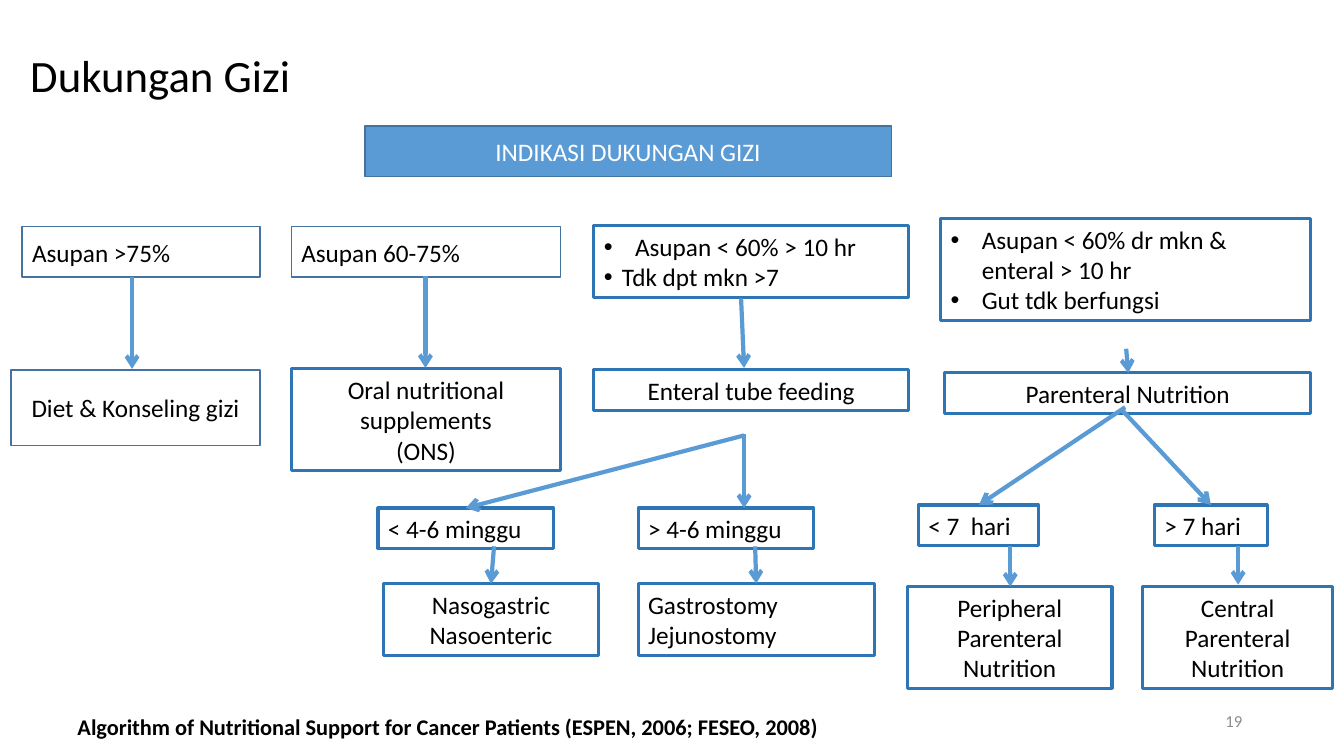
"""Build the nutritional support algorithm slide."""
from lxml.etree import SubElement
from pptx import Presentation
from pptx.dml.color import RGBColor
from pptx.enum.shapes import MSO_CONNECTOR as CONN, MSO_SHAPE as SHAPE
from pptx.enum.text import MSO_ANCHOR as ANCHOR, MSO_AUTO_SIZE as FIT, PP_ALIGN as ALIGN
from pptx.oxml.ns import qn
from pptx.util import Pt

PX = 9144
LEFT, CENTER, RIGHT = ALIGN.LEFT, ALIGN.CENTER, ALIGN.RIGHT
BLACK, WHITE, GRAY = "000000", "FFFFFF", "8C8C8C"
BLUE, DARK, EDGE = "5B9BD5", "2E75B6", "43739E"
THIN, THICK = (EDGE, 1), (DARK, 2.25)

INTAKE_BOXES = [
    (22, 225, 236, 50, ["Asupan >75%"], LEFT, THIN),
    (289, 225, 267, 50, ["Asupan 60-75%"], LEFT, THIN),
    (589, 224, 312, 71, ["Asupan < 60% > 10 hr", "Tdk dpt mkn >7"], LEFT, THICK, (31, 18)),
    (933, 217, 367, 101, ["Asupan < 60% dr mkn & enteral > 10 hr", "Gut tdk berfungsi"],
     LEFT, THICK, (31, 31)),
]
SUPPORT_BOXES = [
    (11, 367, 247, 75, ["Diet & Konseling gizi"], CENTER, THIN),
    (289, 366, 267, 101, ["Oral nutritional", "supplements", "(ONS)"], CENTER, THICK),
    (589, 367, 312, 40, ["Enteral tube feeding"], CENTER, THICK),
    (937, 370, 363, 40, ["Parenteral Nutrition"], CENTER, THICK),
]
DURATION_BOXES = [
    (375, 504, 174, 40, ["< 4-6 minggu"], LEFT, THICK),
    (633, 504, 174, 40, ["> 4-6 minggu"], LEFT, THICK),
    (911, 501, 119, 40, ["< 7  hari"], LEFT, THICK),
    (1145, 501, 112, 40, ["> 7 hari"], LEFT, THICK),
]
ROUTE_BOXES = [
    (380, 579, 214, 71, ["Nasogastric", "Nasoenteric"], CENTER, THICK),
    (633, 579, 234, 71, ["Gastrostomy", "Jejunostomy"], LEFT, THICK),
    (900, 582, 203, 101, ["Peripheral Parenteral", "Nutrition"], CENTER, THICK),
    (1133, 582, 189, 101, ["Central Parenteral Nutrition"], CENTER, THICK),
]
ARROWS = [
    (131, 275, 131, 366), (422, 274, 422, 365), (735, 296, 738, 365), (1117, 346, 1119, 370),
    (738, 432, 462, 504), (738, 431, 738, 504), (1116, 404, 971, 501), (1113, 407, 1201, 501),
    (490, 542, 487, 579), (749, 542, 750, 579), (1002, 542, 1002, 582), (1228, 542, 1228, 580),
]


def rgb(value):
    """Return a colour from a hex string."""
    return RGBColor.from_string(value)


def apply(target, values):
    """Set attributes of an object from a dict."""
    for name, value in values.items():
        setattr(target, name, value)


def place(sp, left, top, width, height):
    """Move and size a shape in px."""
    apply(sp, {"left": left * PX, "top": top * PX, "width": width * PX, "height": height * PX})


def add_bullet(p, indent):
    """Give a paragraph a round bullet with a hanging indent in px."""
    pPr = p._p.get_or_add_pPr()
    pPr.set("marL", str(indent * PX))
    pPr.set("indent", str(-indent * PX))
    SubElement(pPr, qn("a:buFont"), typeface="Arial")
    SubElement(pPr, qn("a:buChar"), char="•")


def write(sp, lines, align=LEFT, size=18, color=BLACK, bold=False, indents=()):
    """Fill a shape with one formatted paragraph per line."""
    tf = sp.text_frame
    apply(tf, {"word_wrap": True, "auto_size": FIT.NONE, "vertical_anchor": ANCHOR.MIDDLE})
    for i, line in enumerate(lines):
        p = tf.add_paragraph() if i else tf.paragraphs[0]
        p.alignment = align
        r = p.add_run()
        r.text = line
        apply(r.font, {"name": "Calibri", "size": Pt(size), "bold": bold})
        r.font.color.rgb = rgb(color)
        if indents:
            add_bullet(p, indents[i])


def add_box(s, left, top, width, height, lines, align, outline, indents=(),
            fill=None, color=BLACK):
    """Add an outlined flowchart box."""
    sp = s.shapes.add_shape(SHAPE.RECTANGLE, 0, 0, 0, 0)
    place(sp, left, top, width, height)
    sp.shadow.inherit = False
    if fill:
        sp.fill.solid()
        sp.fill.fore_color.rgb = rgb(fill)
    else:
        sp.fill.background()
    edge, weight = outline
    sp.line.color.rgb = rgb(edge)
    sp.line.width = Pt(weight)
    write(sp, lines, align, color=color, indents=indents)


def add_arrow(s, *ends):
    """Add an arrow between two points in px."""
    cn = s.shapes.add_connector(CONN.STRAIGHT, *(v * PX for v in ends))
    cn.line.color.rgb = rgb(BLUE)
    cn.line.width = Pt(3)
    SubElement(cn.line._get_or_add_ln(), qn("a:tailEnd"), type="arrow")
    SubElement(cn._element.spPr, qn("a:effectLst"))


def add_label(s, left, top, width, height, text, **style):
    """Add a one-line text box."""
    sp = s.shapes.add_textbox(0, 0, 0, 0)
    place(sp, left, top, width, height)
    write(sp, [text], **style)


def main():
    """Build and save the slide."""
    prs = Presentation()
    apply(prs, {"slide_width": 1333 * PX, "slide_height": 750 * PX})
    s = prs.slides.add_slide(prs.slide_layouts[5])
    title = s.shapes.title
    place(title, 20, 42, 1000, 64)
    write(title, ["Dukungan Gizi"], size=32)
    add_box(s, 362, 125, 522, 50, ["INDIKASI DUKUNGAN GIZI"], CENTER, THIN,
            fill=BLUE, color=WHITE)
    for box in INTAKE_BOXES + SUPPORT_BOXES + DURATION_BOXES + ROUTE_BOXES:
        add_box(s, *box)
    for ends in ARROWS:
        add_arrow(s, *ends)
    add_label(s, 67, 702, 1189, 37,
              "Algorithm of Nutritional Support for Cancer Patients (ESPEN, 2006; FESEO, 2008)",
              size=16, bold=True)
    add_label(s, 942, 695, 300, 40, "19", align=RIGHT, size=12, color=GRAY)
    prs.save("out.pptx")


if __name__ == "__main__":
    main()
